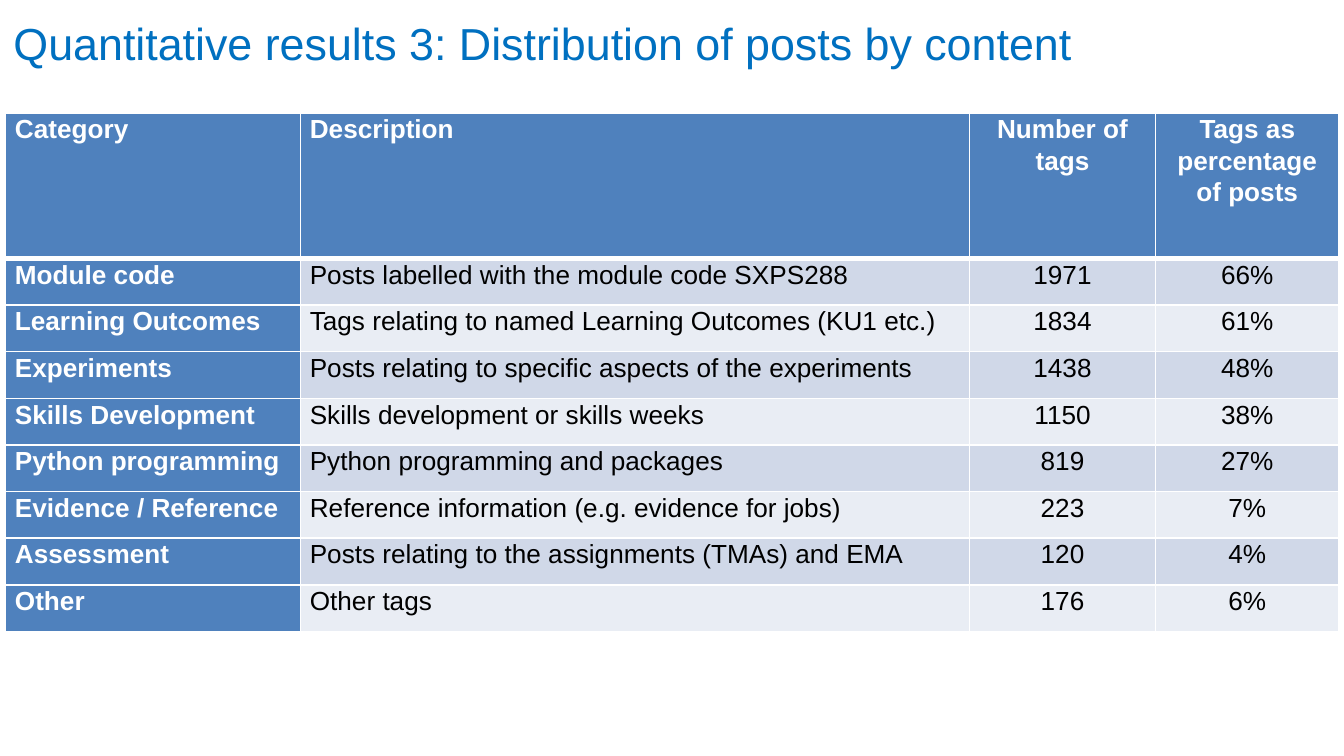
"""Build a slide with a table of posts by content category."""
import lxml.etree
import pptx
import pptx.dml.color
import pptx.enum.text
import pptx.oxml.ns
import pptx.util

Pt = pptx.util.Pt
ALIGN = pptx.enum.text.PP_ALIGN
ANCHOR = pptx.enum.text.MSO_ANCHOR
qn = pptx.oxml.ns.qn

WHITE, BLACK, TITLE_BLUE, HEADER_BLUE = "FFFFFF", "000000", "0070C0", "4F81BD"
BANDS = ["E9EDF4", "D0D8E8"]
COLUMN_WIDTHS = [158, 358.5, 99.5, 98.5]
HEADER_HEIGHT, ROW_HEIGHT = 78, 25
ROWS = [
    ["Category", "Description", "Number of tags", "Tags as percentage of posts"],
    ["Module code", "Posts labelled with the module code SXPS288", "1971", "66%"],
    ["Learning Outcomes", "Tags relating to named Learning Outcomes (KU1 etc.)", "1834", "61%"],
    ["Experiments", "Posts relating to specific aspects of the experiments", "1438", "48%"],
    ["Skills Development", "Skills development or skills weeks", "1150", "38%"],
    ["Python programming", "Python programming and packages", "819", "27%"],
    ["Evidence / Reference", "Reference information (e.g. evidence for jobs)", "223", "7%"],
    ["Assessment", "Posts relating to the assignments (TMAs) and EMA", "120", "4%"],
    ["Other", "Other tags", "176", "6%"],
]


def color(value):
    """Return the colour for a hex string."""
    return pptx.dml.color.RGBColor.from_string(value)


def write(para, text, size, hex_color, bold, **layout):
    """Put one formatted span of text into a paragraph."""
    span = para.add_run()
    span.text = text
    for name, value in {"name": "Arial", "size": Pt(size), "bold": bold}.items():
        setattr(span.font, name, value)
    span.font.color.rgb = color(hex_color)
    for name, value in layout.items():
        setattr(para, name, value)


deck = pptx.Presentation()
deck.slide_width, deck.slide_height = Pt(720), Pt(405)
page = deck.slides.add_slide(deck.slide_layouts[5])

title = page.shapes.title
for name, value in {"left": 0, "top": 5, "width": 683, "height": 36}.items():
    setattr(title, name, Pt(value))
title.text_frame.word_wrap = True
title.text_frame.vertical_anchor = ANCHOR.TOP
write(title.text_frame.paragraphs[0], "Quantitative results 3: Distribution of posts by content",
      24, TITLE_BLUE, False, alignment=ALIGN.LEFT)

table_height = HEADER_HEIGHT + ROW_HEIGHT * (len(ROWS) - 1)
table = page.shapes.add_table(len(ROWS), len(COLUMN_WIDTHS), Pt(3), Pt(60.5),
                              Pt(sum(COLUMN_WIDTHS)), Pt(table_height)).table
table.first_col = True
for column, width in zip(table.columns, COLUMN_WIDTHS):
    column.width = Pt(width)

for row_index, texts in enumerate(ROWS):
    table.rows[row_index].height = Pt(ROW_HEIGHT if row_index else HEADER_HEIGHT)
    for column_index, text in enumerate(texts):
        cell = table.cell(row_index, column_index)
        heading = row_index == 0 or column_index == 0
        margins = {"margin_left": 5, "margin_top": 0, "margin_right": 5, "margin_bottom": 0}
        for name, value in margins.items():
            setattr(cell, name, Pt(value))
        borders = {"lnL": 1, "lnR": 1, "lnT": 3 if row_index == 1 else 1,
                   "lnB": 3 if row_index == 0 else 1}
        for tag, width in borders.items():
            line = lxml.etree.SubElement(cell._tc.get_or_add_tcPr(), qn(f"a:{tag}"), w=str(Pt(width)))
            fill = lxml.etree.SubElement(line, qn("a:solidFill"))
            lxml.etree.SubElement(fill, qn("a:srgbClr"), val=WHITE)
        cell.fill.solid()
        cell.fill.fore_color.rgb = color(HEADER_BLUE if heading else BANDS[row_index % 2])
        write(cell.text_frame.paragraphs[0], text, 14, WHITE if heading else BLACK, heading,
              alignment=ALIGN.CENTER if column_index > 1 else ALIGN.LEFT,
              line_spacing=1.07, space_after=Pt(8))

deck.save("out.pptx")
